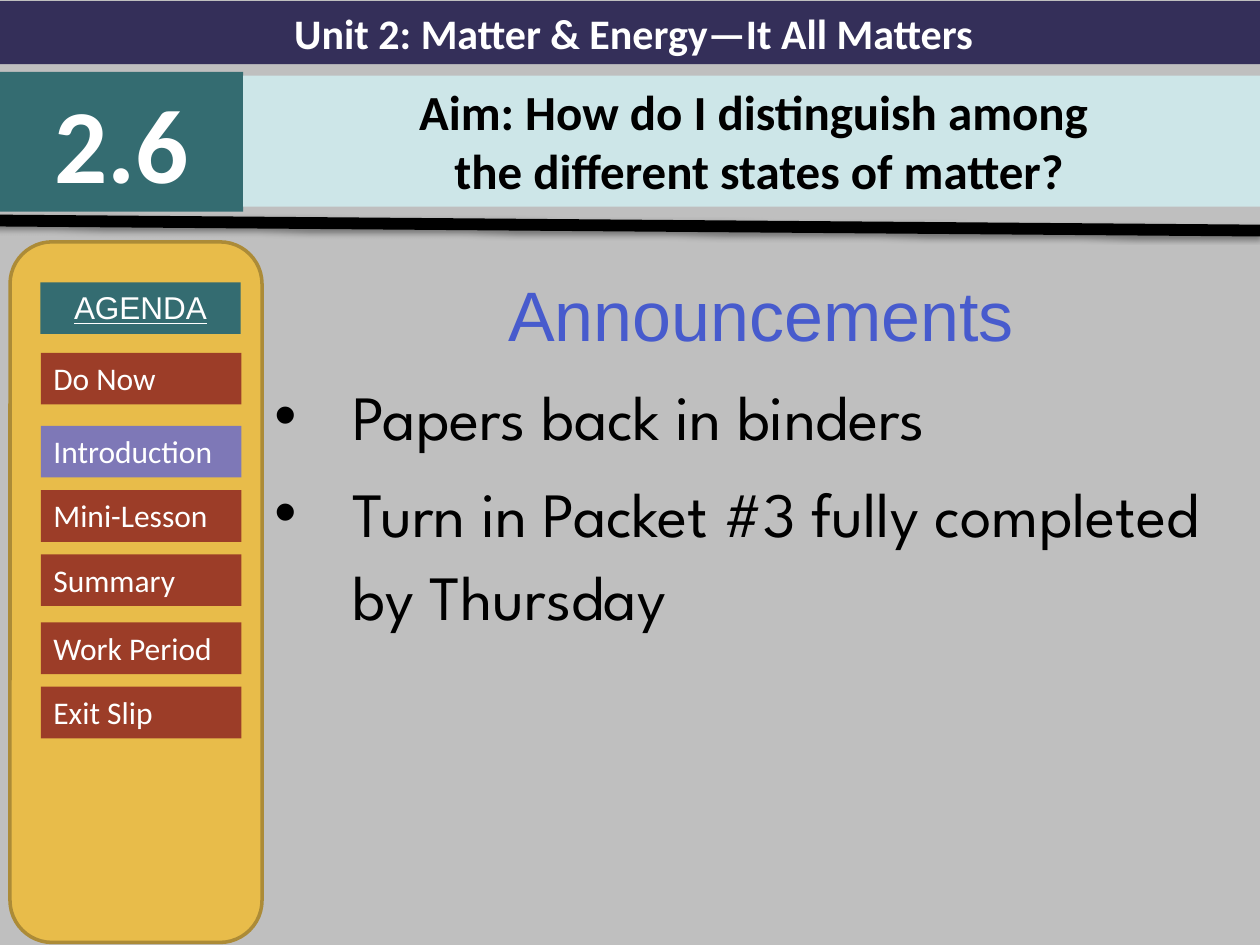
import collections

import lxml.etree
import pptx
import pptx.dml.color
import pptx.enum.shapes
import pptx.enum.text
import pptx.oxml.ns
import pptx.util

Box = collections.namedtuple("Box", "left top width height")
SHAPE = pptx.enum.shapes.MSO_SHAPE
ALIGN = pptx.enum.text.PP_ALIGN
ANCHOR = pptx.enum.text.MSO_ANCHOR
FIT = pptx.enum.text.MSO_AUTO_SIZE

COLUMNS, ROWS = 100, 75
CELL = pptx.util.Inches(10) // COLUMNS

COLORS = {
    "background": "BFBFBF",
    "unit": "342F59",
    "teal": "346C71",
    "aim": "CDE6E8",
    "panel": "E8BC4A",
    "panel_edge": "AC8B37",
    "current": "7E78B7",
    "step": "9C3D28",
    "heading": "475BCD",
    "white": "FFFFFF",
    "black": "000000",
}
FORMATS = {
    "unit": {"name": "Calibri", "size": pptx.util.Pt(24), "bold": True},
    "number": {"name": "Calibri", "size": pptx.util.Pt(60), "bold": True},
    "aim": {"name": "Calibri", "size": pptx.util.Pt(28), "bold": True},
    "agenda": {"name": "Arial", "size": pptx.util.Pt(18), "underline": True},
    "step": {"name": "Calibri", "size": pptx.util.Pt(18)},
    "heading": {"name": "Arial", "size": pptx.util.Pt(40)},
    "notice": {"name": "League Spartan", "size": pptx.util.Pt(36)},
}
STEPS = [
    ("Do Now", 8.8, "step"),
    ("Introduction", 14.6, "current"),
    ("Mini-Lesson", 19.7, "step"),
    ("Summary", 24.8, "step"),
    ("Work Period", 30.2, "step"),
    ("Exit Slip", 35.3, "step"),
]


def rgb(color):
    """Return the named colour."""
    return pptx.dml.color.RGBColor.from_string(COLORS[color])


def cells(*counts):
    """Turn grid counts into slide lengths."""
    return [round(count * CELL) for count in counts]


def inside(box, left, top, width, height):
    """Return a box placed relative to the corner of another box."""
    return Box(box.left + left, box.top + top, width, height)


def write(paragraph, text, style, color, align):
    """Put one formatted run in a paragraph."""
    paragraph.alignment = align
    run = paragraph.add_run()
    run.text = text
    for attribute, value in FORMATS[style].items():
        setattr(run.font, attribute, value)
    run.font.color.rgb = rgb(color)


def add_block(slide, box, fill, kind=SHAPE.RECTANGLE):
    """Add a plain filled shape without an outline."""
    block = slide.shapes.add_shape(kind, *cells(*box))
    block.shadow.inherit = False
    block.fill.solid()
    block.fill.fore_color.rgb = rgb(fill)
    block.line.fill.background()
    return block


def add_label(slide, box, fill, lines, style, color="white", align=ALIGN.CENTER):
    """Add a filled rectangle holding one paragraph per line."""
    frame = add_block(slide, box, fill).text_frame
    frame.word_wrap = True
    frame.auto_size = FIT.SHAPE_TO_FIT_TEXT
    frame.vertical_anchor = ANCHOR.TOP
    for index, line in enumerate(lines):
        paragraph = frame.add_paragraph() if index else frame.paragraphs[0]
        write(paragraph, line, style, color, align)


def add_header(slide, box):
    """Add the unit banner, the lesson number and the aim."""
    add_label(slide, inside(box, 0, 0, box.width, 5), "unit",
              ["Unit 2: Matter & Energy—It All Matters"], "unit")
    add_label(slide, inside(box, 0, 5.6, 19.3, 11.1), "teal", ["2.6"], "number")
    add_label(slide, inside(box, 19.3, 5.9, 81, 10.4), "aim",
              ["Aim: How do I distinguish among", " the different states of matter?"],
              "aim", "black")


def add_divider(slide, box):
    """Add the thick slanted rule with its soft shadow."""
    rule = slide.shapes.add_connector(
        pptx.enum.shapes.MSO_CONNECTOR.STRAIGHT,
        *cells(box.left, box.top, box.left + box.width, box.top + box.height))
    rule.line.color.rgb = rgb("black")
    rule.line.width = pptx.util.Pt(6.75)
    qn = pptx.oxml.ns.qn
    properties = rule.line._get_or_add_ln().getparent()
    effects = lxml.etree.SubElement(properties, qn("a:effectLst"))
    shadow = lxml.etree.SubElement(
        effects, qn("a:outerShdw"), blurRad="40000", dist="20000",
        dir="5400000", rotWithShape="0")
    shade = lxml.etree.SubElement(shadow, qn("a:srgbClr"), val=COLORS["black"])
    lxml.etree.SubElement(shade, qn("a:alpha"), val="38000")


def add_agenda(slide, box):
    """Add the agenda panel with its heading and steps."""
    panel = add_block(slide, box, "panel", SHAPE.ROUNDED_RECTANGLE)
    panel.line.color.rgb = rgb("panel_edge")
    panel.line.width = pptx.util.Pt(2)
    add_label(slide, inside(box, 2.4, 3.2, 15.9, 4.1), "teal", ["AGENDA"], "agenda")
    for step, top, fill in STEPS:
        add_label(slide, inside(box, 2.45, top, 15.9, 4.1), fill, [step], "step",
                  align=ALIGN.LEFT)


def add_announcements(slide, box):
    """Add the announcements heading and its bulleted notices."""
    frame = slide.shapes.add_textbox(*cells(*box)).text_frame
    frame.word_wrap = True
    write(frame.paragraphs[0], "Announcements", "heading", "heading", ALIGN.CENTER)
    indent = cells(6.2)[0]
    for notice in ("Papers back in binders",
                   "Turn in Packet #3 fully completed by Thursday"):
        paragraph = frame.add_paragraph()
        write(paragraph, notice, "notice", "black", ALIGN.LEFT)
        properties = paragraph._p.get_or_add_pPr()
        properties.set("marL", str(indent))
        properties.set("indent", str(-indent))
        qn = pptx.oxml.ns.qn
        lxml.etree.SubElement(properties, qn("a:buFont"), typeface="Arial")
        lxml.etree.SubElement(properties, qn("a:buChar"), char="•")
    for paragraph in frame.paragraphs:
        paragraph.line_spacing = 1.1
        paragraph.space_before = pptx.util.Pt(8)


def main():
    """Build and save the lesson slide."""
    deck = pptx.Presentation()
    deck.slide_width, deck.slide_height = cells(COLUMNS, ROWS)
    slide = deck.slides.add_slide(deck.slide_layouts[6])
    slide.background.fill.solid()
    slide.background.fill.fore_color.rgb = rgb("background")
    add_announcements(slide, Box(20.8, 20.4, 79.2, 54.6))
    add_header(slide, Box(0, 0.1, 100.6, 16.7))
    add_divider(slide, Box(-0.5, 17.5, 100.5, 0.8))
    add_agenda(slide, Box(0.8, 19.2, 20, 55.6))
    deck.save("out.pptx")


if __name__ == "__main__":
    main()
